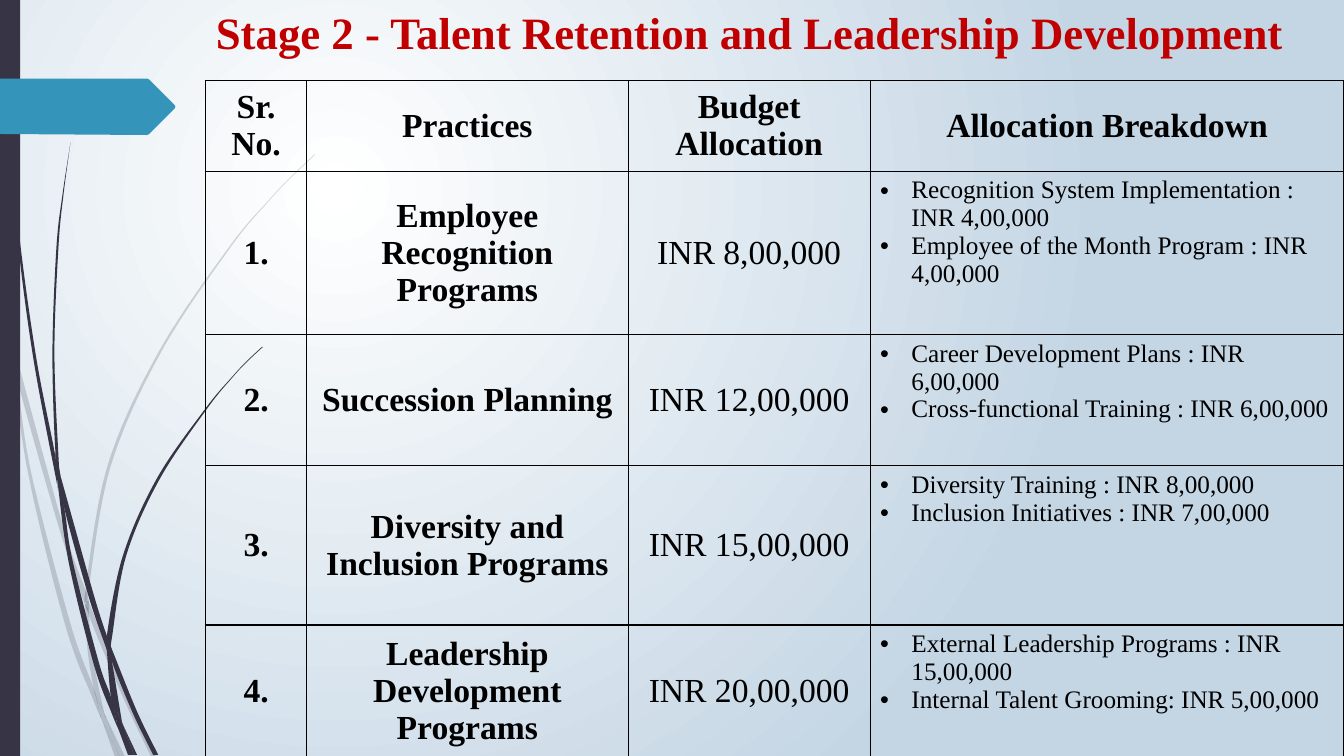
from lxml import etree
from pptx import Presentation
from pptx.dml.color import RGBColor
from pptx.enum.text import MSO_ANCHOR, MSO_AUTO_SIZE, PP_ALIGN
from pptx.enum.shapes import MSO_SHAPE
from pptx.oxml.ns import qn
from pptx.util import Inches, Pt

RECT = MSO_SHAPE.RECTANGLE
TOP, MIDDLE = MSO_ANCHOR.TOP, MSO_ANCHOR.MIDDLE
CENTER, LEFT = PP_ALIGN.CENTER, PP_ALIGN.LEFT
FIXED = MSO_AUTO_SIZE.NONE
FONT = "Times New Roman"
COLORS = {"dark": "373545", "teal": "3494BA", "red": "C00000",
          "black": "000000", "white": "FFFFFF", "mist": "C4D5E4"}


def smooth(knots):
    """Cubic control points that lead smoothly through the knots."""
    ends = [knots[0], *knots, knots[-1]]
    points = []
    for a, b, c, d in zip(ends, ends[1:], ends[2:], ends[3:]):
        points += [tuple(q + (r - p) / 6 for p, q, r in zip(a, b, c)),
                   tuple(r - (s - q) / 6 for q, r, s in zip(b, c, d)), c]
    return points


def paint(shape, color):
    shape.shadow.inherit = False
    shape.fill.solid()
    shape.fill.fore_color.rgb = RGBColor.from_string(COLORS[color])
    shape.line.fill.background()


deck = Presentation()
deck.slide_width, deck.slide_height = Inches(13.33), Inches(7.5)
slide = deck.slides.add_slide(deck.slide_layouts[5])
shapes = slide.shapes

# Background: round gradient, brightest at the upper left
back = slide.background.fill
back.gradient()
for stop, name in zip(back.gradient_stops, ("white", "mist")):
    stop.color.rgb = RGBColor.from_string(COLORS[name])
grad = slide.background._cSld.find(".//" + qn("a:gradFill"))
grad.remove(grad.find(qn("a:lin")))
ring = etree.SubElement(grad, qn("a:path"), {"path": "circle"})
etree.SubElement(ring, qn("a:fillToRect"),
                 {"l": "50000", "t": "50000", "r": "100000", "b": "100000"})

# Grass: each piece has two edges, both from the top down
PALE = [
    ([(0, 2.82), (0, 2.99), (.1, 3.44), (.11, 3.5)],
     [(0, 2.82), (.09, 3.22), (.11, 3.5)]),
    ([(.14, 3.45), (.17, 3.76), (.58, 5.22), (.84, 5.99)],
     [(.14, 3.45), (.62, 5.2), (.85, 5.86)]),
    ([(.88, 5.96), (.88, 6.1), (1.23, 6.94), (1.5, 7.51)],
     [(.88, 5.96), (.92, 6.07), (1.27, 6.92), (1.55, 7.51)]),
    ([(1.05, 7.11), (1.19, 7.51)], [(1.05, 7.11), (1.24, 7.51)]),
    ([(.11, 3.5), (.28, 4.7), (.65, 6.21), (.92, 6.93), (1.01, 7.14)],
     [(.11, 3.5), (.17, 3.76), (.31, 4.69), (.7, 6.19), (.93, 6.83),
      (.99, 7.07), (1.01, 7.14)]),
    ([(.84, 5.99), (.87, 6.46), (.93, 6.83), (.96, 6.92), (1.05, 7.11)],
     [(.84, 5.99), (.88, 6.08), (.91, 6.46), (1.03, 7.06), (1.05, 7.11)]),
    ([(3.12, 1.53), (2.89, 1.75), (2.68, 1.97), (2.28, 2.44), (1.58, 3.48),
      (1.07, 4.61), (.85, 5.84), (.88, 5.96)],
     [(3.12, 1.54), (2.9, 1.75), (2.68, 1.98), (2.29, 2.45), (1.6, 3.49),
      (1.1, 4.62), (.88, 5.84), (.88, 5.96)]),
    ([(1.01, 7.14), (1.14, 7.51)], [(1.01, 7.14), (1.19, 7.51)]),
    ([(.85, 5.86), (.84, 5.99), (.88, 6.08)],
     [(.85, 5.86), (.88, 5.96), (.88, 6.1)]),
    ([(.93, 6.83), (.99, 7.07), (1.01, 7.14), (1.19, 7.51)],
     [(.93, 6.83), (.96, 6.92), (1.05, 7.11), (1.19, 7.51)]),
]
DEEP = [
    ([(.03, 0), (.04, .48), (.07, 1.1), (.17, 2.33), (.33, 3.55),
      (.56, 4.77), (.57, 4.81)],
     [(.04, 0), (.05, .48), (.08, 1.09), (.19, 2.32), (.36, 3.55),
      (.55, 4.53), (.57, 4.81)]),
    ([(.6, 4.72), (.64, 5.05), (.88, 5.92), (1.06, 6.45)],
     [(.6, 4.72), (.93, 5.9), (1.06, 6.31)]),
    ([(1.1, 6.41), (1.11, 6.56), (1.32, 7.08), (1.52, 7.49)],
     [(1.1, 6.41), (1.13, 6.49), (1.36, 7.06), (1.57, 7.49)]),
    ([(.57, 4.77), (.68, 5.57), (.93, 6.59), (1.11, 7.08), (1.17, 7.22)],
     [(.57, 4.77), (.64, 5.05), (.72, 5.56), (.98, 6.57), (1.1, 6.91),
      (1.16, 7.17), (1.17, 7.22)]),
    ([(.7, 1.41), (.62, 1.93), (.56, 2.45), (.52, 3.49), (.55, 4.49),
      (.6, 4.72)],
     [(.7, 1.41), (.63, 1.93), (.58, 2.45), (.54, 3.49), (.58, 4.53),
      (.6, 4.72)]),
    ([(1.22, 7.19), (1.33, 7.49)], [(1.22, 7.19), (1.36, 7.49)]),
    ([(.55, 4.49), (.55, 4.53), (.57, 4.77), (.64, 5.05)],
     [(.55, 4.49), (.6, 4.72), (.64, 5.05)]),
    ([(2.6, 3.44), (2.45, 3.58), (2.31, 3.73), (2.04, 4.05), (1.56, 4.74),
      (1.22, 5.51), (1.06, 6.31), (1.1, 6.41)],
     [(2.61, 3.44), (2.45, 3.59), (2.31, 3.74), (2.05, 4.06), (1.58, 4.76),
      (1.25, 5.52), (1.11, 6.33), (1.1, 6.41)]),
    ([(1.17, 7.22), (1.27, 7.49)], [(1.17, 7.22), (1.31, 7.49)]),
    ([(1.06, 6.45), (1.1, 6.91), (1.16, 7.06), (1.22, 7.19)],
     [(1.06, 6.45), (1.09, 6.51), (1.11, 6.56), (1.21, 7.16), (1.22, 7.19)]),
    ([(1.06, 6.31), (1.06, 6.45), (1.11, 6.56)],
     [(1.06, 6.31), (1.1, 6.41), (1.11, 6.56)]),
    ([(1.1, 6.91), (1.16, 7.17), (1.17, 7.22), (1.3, 7.49)],
     [(1.1, 6.91), (1.16, 7.06), (1.22, 7.19), (1.33, 7.49)]),
]
for faint, blades in ((True, PALE), (False, DEEP)):
    for left, right in blades:
        foot = right[-1]
        edge = smooth(left) + [left[-1], foot, foot] + smooth(right[::-1])
        pen = shapes.build_freeform(*map(Inches, left[0]))
        pen.add_line_segments([(Inches(x), Inches(y)) for x, y in edge])
        blade = pen.convert_to_shape()
        paint(blade, "dark")
        # Every three points make one curve
        lines = list(blade._element.iter(qn("a:lnTo")))
        for i in range(0, len(edge), 3):
            bend = etree.Element(qn("a:cubicBezTo"))
            lines[i].addprevious(bend)
            for line in lines[i:i + 3]:
                bend.append(line[0])
                line.getparent().remove(line)
        if faint:
            tint = blade._element.spPr.find(".//" + qn("a:srgbClr"))
            etree.SubElement(tint, qn("a:alpha"), val="20000")

# Side bar and arrow tab
bar = shapes.add_shape(RECT, 0, 0, Inches(.2), Inches(7.5))
paint(bar, "dark")
TAB = [(1.46, .78), (1.48, .79), (1.73, 1.04), (1.74, 1.06), (1.73, 1.08),
       (1.48, 1.33), (1.46, 1.34), (0, 1.33)]
pen = shapes.build_freeform(0, Inches(.78))
pen.add_line_segments([(Inches(x), Inches(y)) for x, y in TAB])
paint(pen.convert_to_shape(), "teal")

# Budget table
HEADS = ["Sr. No.", "Practices", "Budget Allocation", "Allocation Breakdown"]
ROWS = [
    ("Employee Recognition Programs", "INR 8,00,000",
     "Recognition System Implementation : INR 4,00,000\n"
     "Employee of the Month Program : INR 4,00,000"),
    ("Succession Planning", "INR 12,00,000",
     "Career Development Plans : INR 6,00,000\n"
     "Cross-functional Training : INR 6,00,000"),
    ("Diversity and Inclusion Programs", "INR 15,00,000",
     "Diversity Training : INR 8,00,000\nInclusion Initiatives : INR 7,00,000"),
    ("Leadership Development Programs", "INR 20,00,000",
     "External Leadership Programs : INR 15,00,000\n"
     "Internal Talent Grooming: INR 5,00,000"),
]
grid = [HEADS] + [(f"{n}.", *row) for n, row in enumerate(ROWS, 1)]
table = shapes.add_table(len(grid), len(HEADS), Inches(2.04), Inches(.8),
                         Inches(11.29), Inches(6.71)).table
table.horz_banding = False
for col, wide in zip(table.columns, (1, 3.19, 2.4, 4.7)):
    col.width = Inches(wide)
for row, high in zip(table.rows, (.9, 1.62, 1.3, 1.58, 1.31)):
    row.height = Inches(high)
for r, row in enumerate(grid):
    for c, text in enumerate(row):
        cell = table.cell(r, c)
        cell.text = text
        listed = r > 0 and c == 3
        cell.vertical_anchor = TOP if listed else MIDDLE
        for para in cell.text_frame.paragraphs:
            font = para.font
            font.name, font.size = FONT, Pt(18 if listed else 24)
            font.bold = r == 0 or c < 2
            font.color.rgb = RGBColor.from_string(COLORS["black"])
            para.alignment = LEFT if listed else CENTER
            if listed:
                props = para._p.get_or_add_pPr()
                props.set("marL", str(Inches(.31)))
                props.set("indent", str(-Inches(.31)))
                props.insert(0, etree.Element(qn("a:buFont"), typeface="Arial"))
                props.insert(1, etree.Element(qn("a:buChar"), char="•"))
        # Thin black borders come before the fill
        frame = cell._tc.get_or_add_tcPr()
        for side in ("lnL", "lnR", "lnT", "lnB"):
            line = etree.SubElement(frame, qn("a:" + side), w=str(Pt(1)))
            ink = etree.SubElement(line, qn("a:solidFill"))
            etree.SubElement(ink, qn("a:srgbClr"), val=COLORS["black"])
        cell.fill.background()

# Title
title = shapes.title
title.left, title.top = Inches(2.04), 0
title.width, title.height = Inches(11.29), Inches(.64)
title.text = "Stage 2 - Talent Retention and Leadership Development"
title.text_frame.auto_size = FIXED
title.text_frame.word_wrap = True
title.text_frame.vertical_anchor = TOP
head = title.text_frame.paragraphs[0]
head.alignment = LEFT
head.font.name, head.font.size, head.font.bold = FONT, Pt(32), True
head.font.color.rgb = RGBColor.from_string(COLORS["red"])
deck.save("out.pptx")
